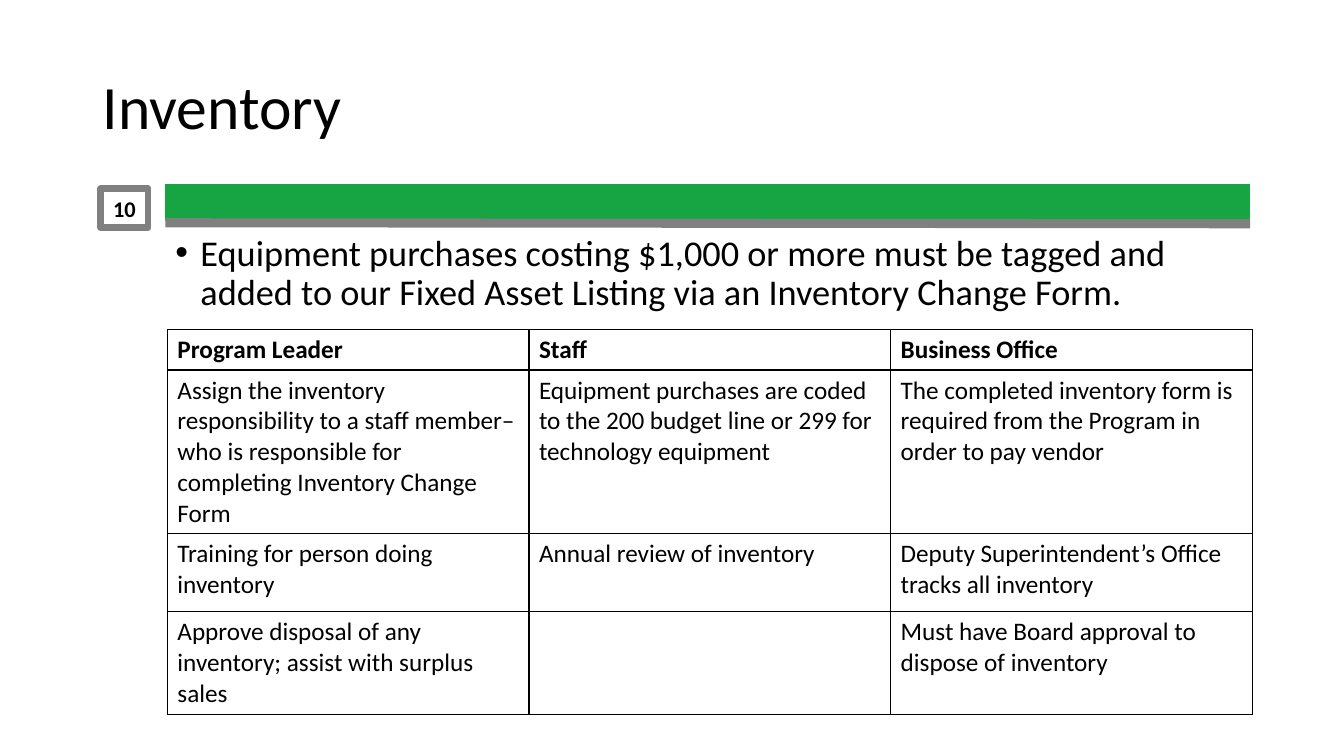
from lxml import etree
from pptx import Presentation
from pptx.dml.color import RGBColor
from pptx.enum.shapes import MSO_CONNECTOR, MSO_SHAPE
from pptx.enum.text import MSO_ANCHOR, PP_ALIGN
from pptx.oxml.ns import qn
from pptx.util import Inches, Pt

STRAIGHT, RECT = MSO_CONNECTOR.STRAIGHT, MSO_SHAPE.RECTANGLE
LEFT, CENTER, MIDDLE = PP_ALIGN.LEFT, PP_ALIGN.CENTER, MSO_ANCHOR.MIDDLE
BLACK, GREEN, GREY = "000000", "17A543", "808080"


def rgb(color):
    return RGBColor.from_string(color)


def write(tf, text, size, bold=False, **paragraph_format):
    p = tf.paragraphs[0]
    for name, value in paragraph_format.items():
        setattr(p, name, value)
    r = p.add_run()
    r.text = text
    for name, value in dict(name="Calibri", size=Pt(size), bold=bold).items():
        setattr(r.font, name, value)
    r.font.color.rgb = rgb(BLACK)
    return p


prs = Presentation()
prs.slide_width, prs.slide_height = Inches(13.33), Inches(7.5)
s = prs.slides.add_slide(prs.slide_layouts[5])

# Title
title = s.shapes.title
box = dict(left=0.92, top=0.36, width=11.5, height=1.45)
for name, value in box.items():
    setattr(title, name, Inches(value))
title.text_frame.vertical_anchor = MIDDLE
write(title.text_frame, "Inventory", 44, alignment=LEFT, line_spacing=0.9)

# Bulleted policy statement
sp = s.shapes.add_textbox(Inches(1.64), Inches(2.28), Inches(10.77), Inches(1.13))
sp.text_frame.word_wrap = True
p = write(sp.text_frame, "Equipment purchases costing $1,000 or more must be tagged and "
          "added to our Fixed Asset Listing via an Inventory Change Form.",
          25.9, line_spacing=0.9)
pPr = p._p.get_or_add_pPr()
pPr.set("marL", str(Inches(0.25)))
pPr.set("indent", str(-Inches(0.25)))
etree.SubElement(pPr, qn("a:buFont")).set("typeface", "Arial")
etree.SubElement(pPr, qn("a:buChar")).set("char", "•")

# Divider: green bar with a grey edge below
for y1, y2, color, weight in [(2.01, 2.01, GREEN, 26.25), (2.21, 2.22, GREY, 6.5)]:
    bar = s.shapes.add_connector(STRAIGHT, Inches(1.64), Inches(y1), Inches(12.4), Inches(y2))
    bar.line.color.rgb = rgb(color)
    bar.line.width = Pt(weight)
    etree.SubElement(bar._element.spPr, qn("a:effectLst"))

# Page number box
number = s.shapes.add_shape(RECT, Inches(1), Inches(1.87), Inches(0.47), Inches(0.39))
number.shadow.inherit = False
number.fill.background()
number.line.color.rgb = rgb(GREY)
number.line.width = Pt(4.75)
tf = number.text_frame
tf.margin_left = tf.margin_right = tf.margin_top = tf.margin_bottom = 0
tf.vertical_anchor = MIDDLE
write(tf, "10", 16, bold=True, alignment=CENTER)

# Responsibilities table
ROWS = [
    ("Program Leader", "Staff", "Business Office"),
    ("Assign the inventory responsibility to a staff member– who is responsible for "
     "completing Inventory Change Form",
     "Equipment purchases are coded to the 200 budget line or 299 for technology equipment",
     "The completed inventory form is required from the Program in order to pay vendor"),
    ("Training for person doing inventory", "Annual review of inventory",
     "Deputy Superintendent’s Office tracks all inventory"),
    ("Approve disposal of any inventory; assist with surplus sales", "",
     "Must have Board approval to dispose of inventory"),
]
HEIGHTS = [0.4, 1.62, 0.78, 1.02]
table = s.shapes.add_table(len(ROWS), 3, Inches(1.66), Inches(3.27),
                           Inches(10.76), Inches(sum(HEIGHTS))).table
table.horz_banding = False
for i, (row, height) in enumerate(zip(ROWS, HEIGHTS)):
    table.rows[i].height = Inches(height)
    for j, text in enumerate(row):
        cell = table.cell(i, j)
        if text:
            write(cell.text_frame, text, 18, bold=i == 0)
        tcPr = cell._tc.get_or_add_tcPr()
        for side in ("a:lnL", "a:lnR", "a:lnT", "a:lnB"):
            ln = etree.SubElement(tcPr, qn(side), w=str(Pt(1)))
            fill = etree.SubElement(ln, qn("a:solidFill"))
            etree.SubElement(fill, qn("a:srgbClr"), val=BLACK)
        cell.fill.background()

prs.save("out.pptx")
